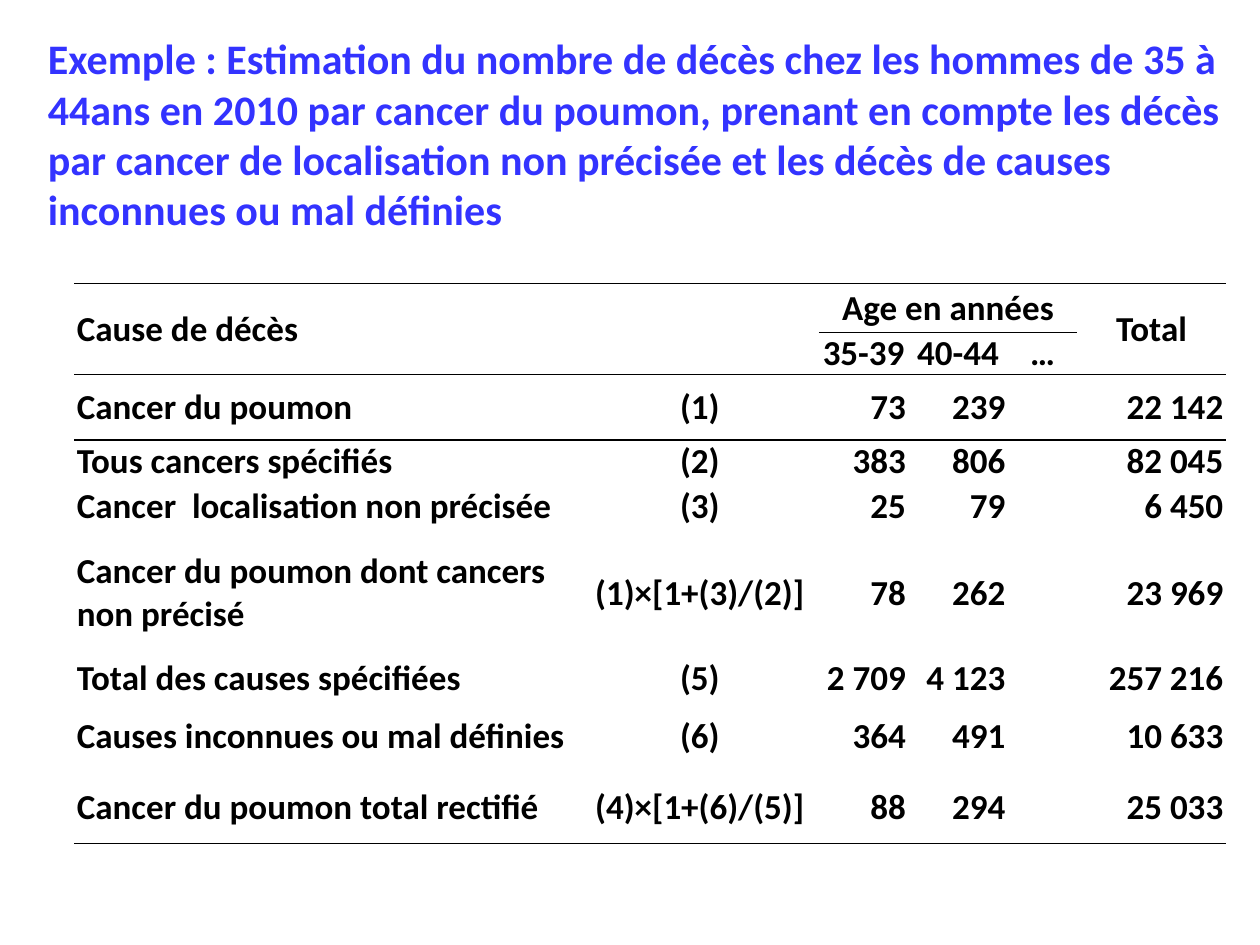
import pptx
import pptx.util
import pptx.dml.color
import pptx.enum.text
import pptx.oxml
import pptx.oxml.ns

Inches = pptx.util.Inches
Pt = pptx.util.Pt
ALIGN = pptx.enum.text.PP_ALIGN
ANCHOR = pptx.enum.text.MSO_ANCHOR

BLUE = pptx.dml.color.RGBColor(0x33, 0x33, 0xFF)
BLACK = pptx.dml.color.RGBColor(0, 0, 0)
WHITE = pptx.dml.color.RGBColor(0xFF, 0xFF, 0xFF)
FONT = "Calibri"
NO_GRID = "{2D5ABB26-0587-4C30-8999-92F81FD0307C}"

TITLE = ("Exemple : Estimation du nombre de décès chez les hommes de 35 à "
         "44ans en 2010 par cancer du poumon, prenant en compte les décès "
         "par cancer de localisation non précisée et les décès de causes "
         "inconnues ou mal définies")
WIDTHS = [4.02, 1.89, 0.71, 0.79, 0.55, 1.18]
HEIGHTS = [0.39, 0.2, 0.52, 0.31, 0.39, 0.98, 0.37, 0.55, 0.58]
HEAD = [
    ["Cause de décès", "", "Age en années", "", "", "Total"],
    ["", "", "35-39", "40-44", "…", ""],
]
BODY = [
    ["Cancer du poumon", "(1)", "73", "239", "", "22 142"],
    ["Tous cancers spécifiés", "(2)", "383", "806", "", "82 045"],
    ["Cancer  localisation non précisée", "(3)", "25", "79", "", "6 450"],
    ["Cancer du poumon dont cancers non précisé", "(1)×[1+(3)/(2)]",
     "78", "262", "", "23 969"],
    ["Total des causes spécifiées", "(5)", "2 709", "4 123", "", "257 216"],
    ["Causes inconnues ou mal définies", "(6)", "364", "491", "", "10 633"],
    ["Cancer du poumon total rectifié", "(4)×[1+(6)/(5)]",
     "88", "294", "", "25 033"],
]
AGES = range(2, 5)
MERGES = [((0, 0), (1, 0)), ((0, 2), (0, 4)), ((0, 5), (1, 5))]


def add_run(para, text, size, color):
    run = para.add_run()
    run.text = text
    run.font.name = FONT
    run.font.size = Pt(size)
    run.font.bold = True
    run.font.color.rgb = color


def add_title(slide, left, top, width, height):
    title = slide.shapes.title
    title.left, title.top = Inches(left), Inches(top)
    title.width, title.height = Inches(width), Inches(height)
    frame = title.text_frame
    frame.word_wrap = True
    frame.auto_size = pptx.enum.text.MSO_AUTO_SIZE.SHAPE_TO_FIT_TEXT
    frame.vertical_anchor = ANCHOR.TOP
    para = frame.paragraphs[0]
    para.alignment = ALIGN.LEFT
    add_run(para, TITLE, 24, BLUE)


def add_rule(cell, side):
    """Draw a black line on the top (T) or bottom (B) of a cell."""
    line = pptx.oxml.parse_xml(
        f'<a:ln{side} {pptx.oxml.ns.nsdecls("a")} w="{Pt(1)}">'
        f'<a:solidFill><a:srgbClr val="{BLACK}"/></a:solidFill></a:ln{side}>')
    cell._tc.get_or_add_tcPr().append(line)


def rule_cell(cell, row, col):
    if row in (0, 2) or (row == 1 and col in AGES):
        add_rule(cell, "T")
    if row in (1, len(HEIGHTS) - 1) or (row == 0 and col != 1):
        add_rule(cell, "B")


def fill_cell(cell, text, row, col):
    cell.margin_left = cell.margin_right = Inches(0.02)
    cell.margin_top = cell.margin_bottom = 0
    cell.vertical_anchor = ANCHOR.MIDDLE
    rule_cell(cell, row, col)
    if row in (5, 6, 7) and col in AGES:
        cell.fill.solid()
        cell.fill.fore_color.rgb = WHITE
    else:
        cell.fill.background()
    if not text:
        return
    para = cell.text_frame.paragraphs[0]
    if col == 0:
        para.alignment = ALIGN.LEFT
    elif col == 1 or row < len(HEAD):
        para.alignment = ALIGN.CENTER
    else:
        para.alignment = ALIGN.RIGHT
    add_run(para, text, 20, BLACK)


def add_deaths(slide, left, top):
    """Place the table of deaths by cause and age."""
    table = slide.shapes.add_table(
        len(HEIGHTS), len(WIDTHS), Inches(left), Inches(top),
        Inches(sum(WIDTHS)), Inches(sum(HEIGHTS))).table
    table.first_row = table.horz_banding = False
    style = table._tbl.tblPr.find(pptx.oxml.ns.qn("a:tableStyleId"))
    style.text = NO_GRID
    for col, width in zip(table.columns, WIDTHS):
        col.width = Inches(width)
    for row, height in zip(table.rows, HEIGHTS):
        row.height = Inches(height)
    for first, last in MERGES:
        table.cell(*first).merge(table.cell(*last))
    for row, texts in enumerate(HEAD + BODY):
        for col, text in enumerate(texts):
            fill_cell(table.cell(row, col), text, row, col)


def main():
    deck = pptx.Presentation()
    deck.slide_width, deck.slide_height = Inches(10), Inches(7.5)
    slide = deck.slides.add_slide(deck.slide_layouts[5])
    add_title(slide, 0.28, 0.21, 9.69, 1.72)
    add_deaths(slide, 0.59, 2.25)
    deck.save("out.pptx")


if __name__ == "__main__":
    main()
